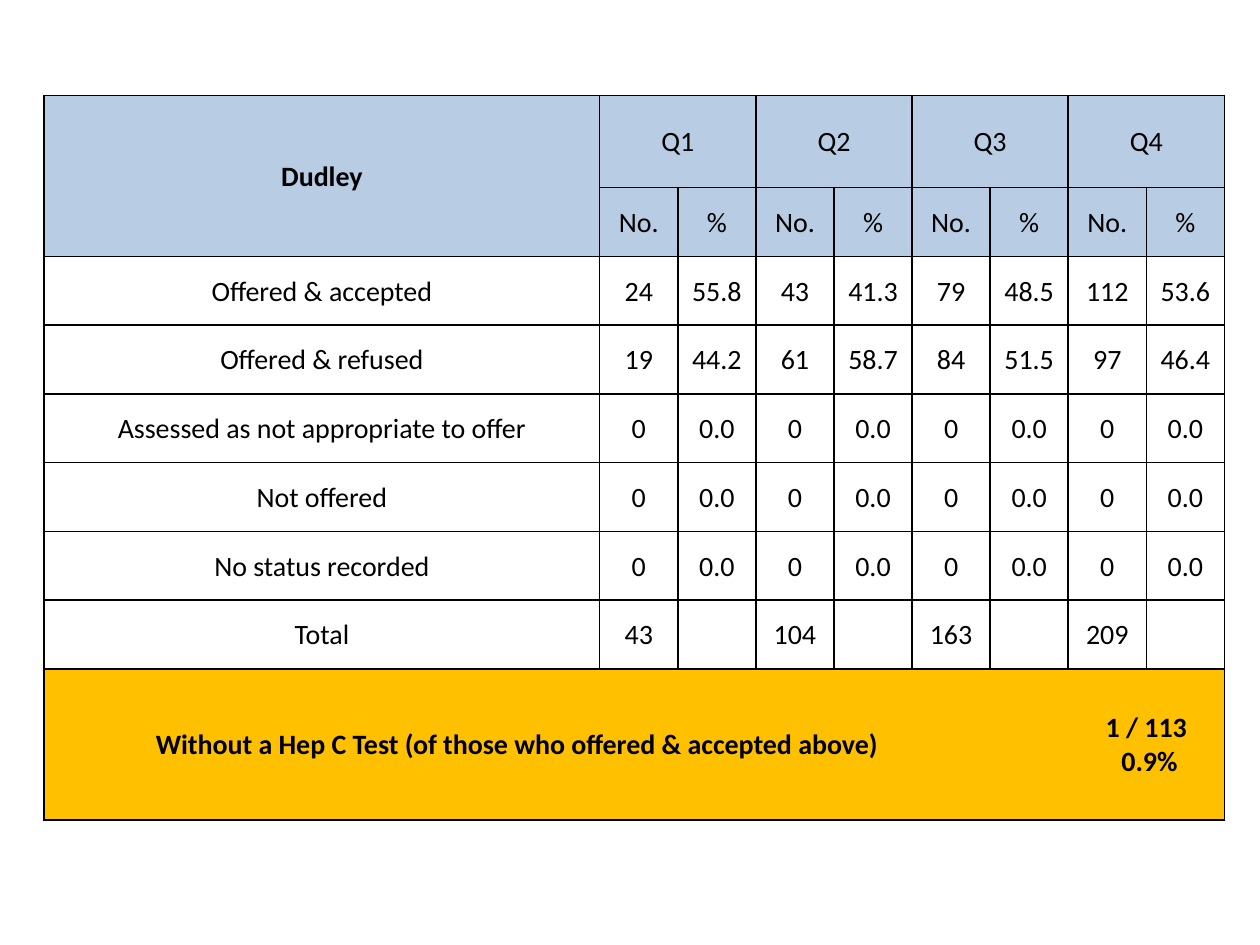
from dataclasses import dataclass

import pptx
import pptx.dml.color
import pptx.enum.text
import pptx.oxml
import pptx.oxml.ns
import pptx.util
from pptx.util import Inches

COLOURS = {"header": "B8CCE4", "highlight": "FFC000", "ink": "000000"}
FONT = "Calibri"
TEXT_SIZE = 16

LEFT, TOP, WIDTH, HEIGHT = 0.35, 0.76, 9.37, 5.75
LABEL_WIDTH, HEADER_HEIGHT, SUMMARY_HEIGHT = 4.41, 0.73, 1.2
QUARTERS = ["Q1", "Q2", "Q3", "Q4"]
EMPTY = ["0", "0.0"] * len(QUARTERS)
RESULTS = [
    ["Offered & accepted", "24", "55.8", "43", "41.3", "79", "48.5", "112", "53.6"],
    ["Offered & refused", "19", "44.2", "61", "58.7", "84", "51.5", "97", "46.4"],
    ["Assessed as not appropriate to offer", *EMPTY],
    ["Not offered", *EMPTY],
    ["No status recorded", *EMPTY],
    ["Total", "43", "", "104", "", "163", "", "209", ""],
]
VALUE_COLUMNS = 2 * len(QUARTERS)
SUMMARY_ROW = 2 + len(RESULTS)


@dataclass
class Block:
    text: str
    row: int
    column: int
    rows: int = 1
    columns: int = 1
    fill: str = ""
    bold: bool = False
    sides: str = "LRTB"


def set_borders(cell: pptx.table._Cell, sides: str) -> None:
    properties = cell._tc.get_or_add_tcPr()
    namespace = pptx.oxml.ns.nsdecls("a")
    for side in "LRTB":
        paint = "<a:noFill/>"
        if side in sides:
            paint = f'<a:solidFill><a:srgbClr val="{COLOURS["ink"]}"/></a:solidFill>'
        properties.append(pptx.oxml.parse_xml(
            f'<a:ln{side} {namespace} w="{pptx.util.Pt(1)}">{paint}</a:ln{side}>'))


def draw_block(table: pptx.table.Table, block: Block) -> None:
    last_row = block.row + block.rows - 1
    last_column = block.column + block.columns - 1
    for row in range(block.row, last_row + 1):
        for column in range(block.column, last_column + 1):
            cell = table.cell(row, column)
            set_borders(cell, block.sides)
            if block.fill:
                cell.fill.solid()
                cell.fill.fore_color.rgb = pptx.dml.color.RGBColor.from_string(COLOURS[block.fill])
            else:
                cell.fill.background()

    cell = table.cell(block.row, block.column)
    if block.rows * block.columns > 1:
        cell.merge(table.cell(last_row, last_column))
    cell.vertical_anchor = pptx.enum.text.MSO_ANCHOR.MIDDLE
    cell.margin_left = cell.margin_right = cell.margin_top = Inches(0.01)
    cell.margin_bottom = 0
    para = cell.text_frame.paragraphs[0]
    para.text = block.text
    para.alignment = pptx.enum.text.PP_ALIGN.CENTER
    for span in para.runs:
        span.font.name = FONT
        span.font.size = pptx.util.Pt(TEXT_SIZE)
        span.font.bold = block.bold
        span.font.color.rgb = pptx.dml.color.RGBColor.from_string(COLOURS["ink"])


def table_blocks() -> list[Block]:
    blocks = [Block("Dudley", 0, 0, rows=2, fill="header", bold=True)]
    for index, quarter in enumerate(QUARTERS):
        column = 1 + 2 * index
        blocks += [
            Block(quarter, 0, column, columns=2, fill="header"),
            Block("No.", 1, column, fill="header"),
            Block("%", 1, column + 1, fill="header"),
        ]
    for row, values in enumerate(RESULTS, start=2):
        blocks += [Block(value, row, column) for column, value in enumerate(values)]
    blocks += [
        Block("Without a Hep C Test (of those who offered & accepted above)", SUMMARY_ROW, 0,
              columns=6, fill="highlight", bold=True, sides="LTB"),
        Block("", SUMMARY_ROW, 6, fill="highlight", sides="TB"),
        Block("1 / 113\v 0.9%", SUMMARY_ROW, 7, columns=2, fill="highlight", bold=True, sides="RTB"),
    ]
    return blocks


def main() -> None:
    deck = pptx.Presentation()
    deck.slide_width, deck.slide_height = Inches(10), Inches(7.5)
    page = deck.slides.add_slide(deck.slide_layouts[6])
    table = page.shapes.add_table(
        SUMMARY_ROW + 1, VALUE_COLUMNS + 1,
        Inches(LEFT), Inches(TOP), Inches(WIDTH), Inches(HEIGHT)).table
    table.first_row = table.horz_banding = False

    for column in table.columns:
        column.width = Inches((WIDTH - LABEL_WIDTH) / VALUE_COLUMNS)
    table.columns[0].width = Inches(LABEL_WIDTH)
    for row in table.rows:
        row.height = Inches((HEIGHT - HEADER_HEIGHT - SUMMARY_HEIGHT) / (SUMMARY_ROW - 1))
    table.rows[0].height = Inches(HEADER_HEIGHT)
    table.rows[SUMMARY_ROW].height = Inches(SUMMARY_HEIGHT)

    for block in table_blocks():
        draw_block(table, block)
    deck.save("out.pptx")


if __name__ == "__main__":
    main()
